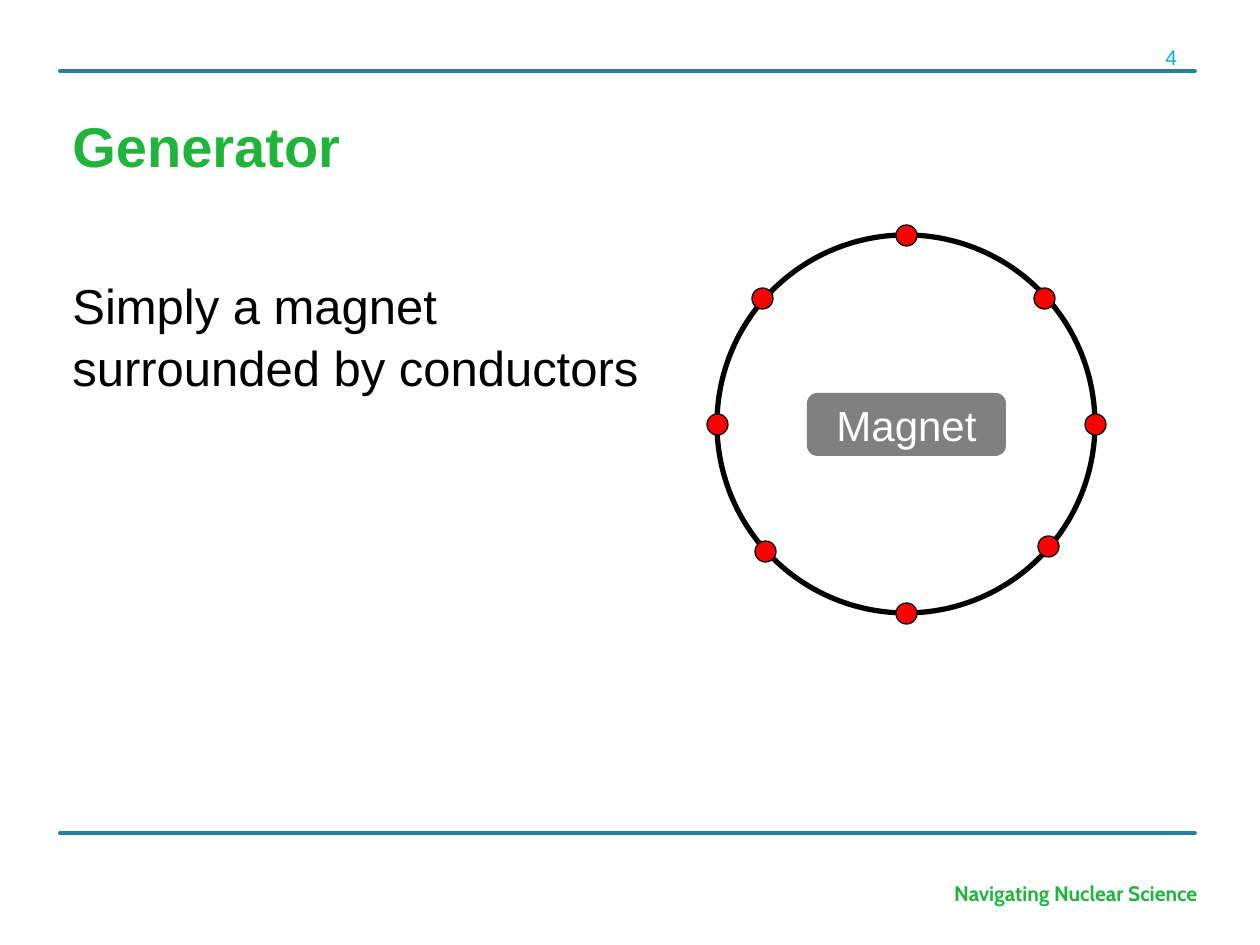
from lxml import etree
from pptx import Presentation
from pptx.dml.color import RGBColor
from pptx.enum.shapes import MSO_CONNECTOR, MSO_SHAPE
from pptx.enum.text import MSO_ANCHOR, PP_ALIGN
from pptx.oxml.ns import qn
from pptx.util import Pt

STRAIGHT = MSO_CONNECTOR.STRAIGHT
OVAL, ROUNDED = MSO_SHAPE.OVAL, MSO_SHAPE.ROUNDED_RECTANGLE
MIDDLE = MSO_ANCHOR.MIDDLE
LEFT, CENTER, RIGHT = PP_ALIGN.LEFT, PP_ALIGN.CENTER, PP_ALIGN.RIGHT
TEAL = RGBColor(0x26, 0x81, 0x9E)
GREEN = RGBColor(0x1E, 0xB5, 0x3A)
CYAN = RGBColor(0x00, 0xB0, 0xF0)
BLACK = RGBColor(0x00, 0x00, 0x00)
WHITE = RGBColor(0xFF, 0xFF, 0xFF)
GRAY = RGBColor(0x80, 0x80, 0x80)
RED = RGBColor(0xFF, 0x00, 0x00)
PX = 914400 / 126


def px(*values):
    return [round(v * PX) for v in values]


def add_shape(kind, box, fill, line_width):
    sp = s.shapes.add_shape(kind, *px(*box))
    sp.shadow.inherit = False
    if fill is None:
        sp.fill.background()
    else:
        sp.fill.solid()
        sp.fill.fore_color.rgb = fill
    if line_width:
        sp.line.color.rgb = BLACK
        sp.line.width = Pt(line_width)
    else:
        sp.line.fill.background()
    return sp


prs = Presentation()
prs.slide_width, prs.slide_height = px(1260, 945)
s = prs.slides.add_slide(prs.slide_layouts[6])

for y in (833, 71):
    rule = s.shapes.add_connector(STRAIGHT, *px(60, y, 1195, y))
    rule.line.color.rgb = TEAL
    rule.line.width = Pt(2.25)
    rule.line._get_or_add_ln().set("cap", "rnd")
    etree.SubElement(rule._element.spPr, qn("a:effectLst"))

magnet = add_shape(ROUNDED, (807, 393, 199, 63), GRAY, 0)
magnet.text_frame.vertical_anchor = MIDDLE

add_shape(OVAL, (717, 235, 378, 378), None, 3)
conductors = [(906, 235), (906, 613), (1095, 424), (717, 424),
              (1044, 298), (765, 551), (762, 298), (1048, 546)]
for x, y in conductors:
    add_shape(OVAL, (x - 10, y - 10, 21, 21), RED, 0.75)

footer, title, body, number = [
    s.shapes.add_textbox(*px(*box))
    for box in ((804, 874, 406, 38), (60, 100, 1134, 157),
                (60, 265, 625, 315), (1153, 38, 53, 50))
]
for sp in (title, body):
    sp.text_frame.margin_top = px(8)[0]

texts = [
    (footer, "Navigating Nuclear Science", RIGHT, 1,
     {"name": "Cabin", "size": Pt(12), "bold": True}, GREEN),
    (title, "Generator", LEFT, 1.05,
     {"name": "Arial", "size": Pt(32), "bold": True}, GREEN),
    (body, "Simply a magnet surrounded by conductors", LEFT, 1.05,
     {"name": "Arial", "size": Pt(28)}, BLACK),
    (magnet, "Magnet", CENTER, 1, {"name": "Arial", "size": Pt(24)}, WHITE),
    (number, "4", LEFT, 1, {"name": "Arial", "size": Pt(12)}, CYAN),
]
for sp, text, align, spacing, formats, color in texts:
    tf = sp.text_frame
    tf.word_wrap = sp is not magnet
    p = tf.paragraphs[0]
    p.alignment = align
    p.line_spacing = spacing
    r = p.add_run()
    r.text = text
    for key, value in formats.items():
        setattr(r.font, key, value)
    r.font.color.rgb = color

prs.save("out.pptx")
